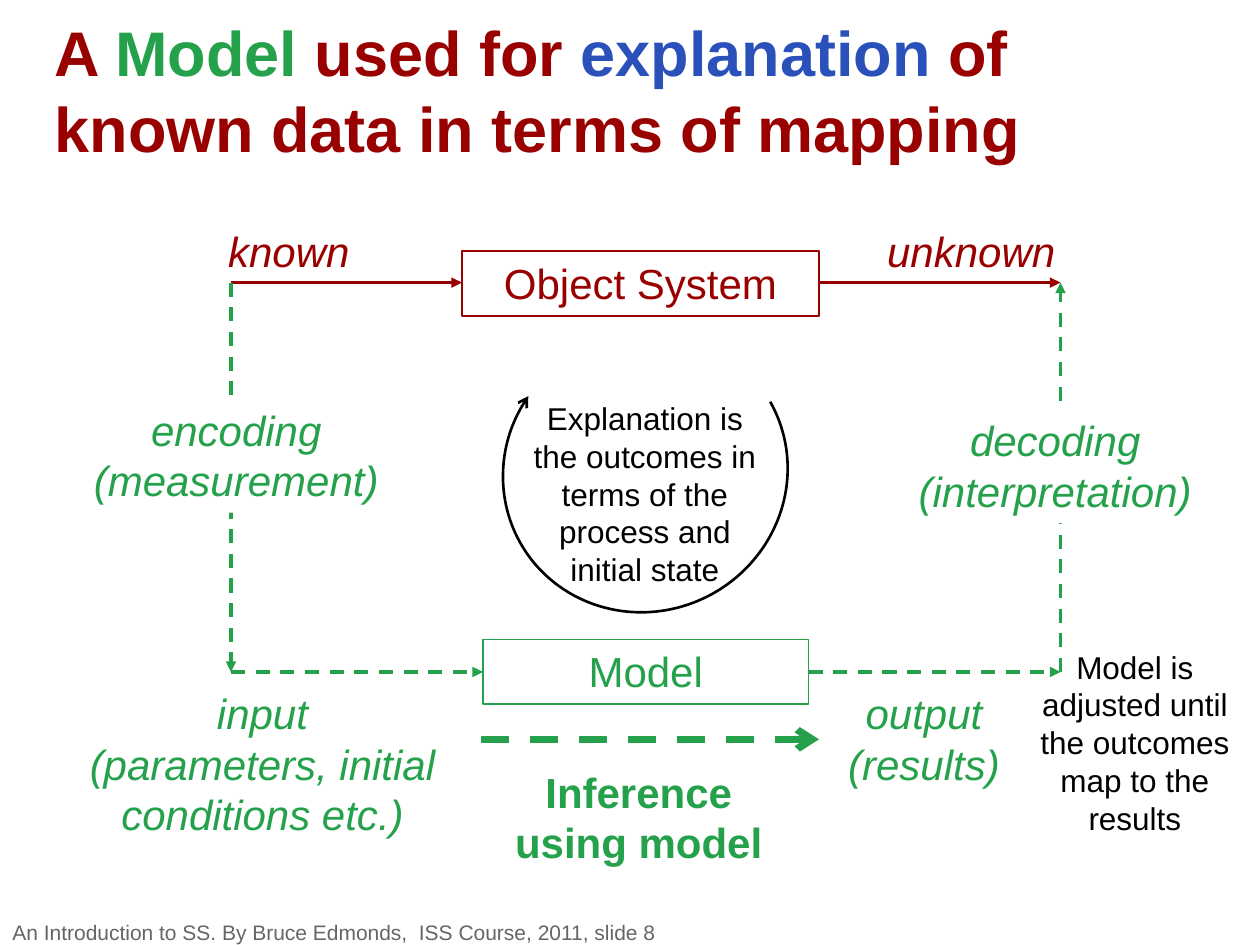
from typing import NamedTuple

from lxml import etree
from pptx import Presentation
from pptx import util as u
from pptx.dml.color import RGBColor
from pptx.enum import dml, shapes, text
from pptx.oxml import ns

Pt = u.Pt
RED = RGBColor(0x99, 0x00, 0x00)
GREEN = RGBColor(0x25, 0xA1, 0x4B)
BLUE = RGBColor(0x2A, 0x50, 0xBA)
GREY = RGBColor(0x65, 0x65, 0x65)
BLACK = RGBColor(0, 0, 0)
WHITE = RGBColor(0xFF, 0xFF, 0xFF)
FONT = "Arial"

# Corners of the mapping loop
LEFT, RIGHT, TOP, BOTTOM = 132, 606, 161.5, 384


class Label(NamedTuple):
    words: str
    left: float
    top: float
    width: float
    height: float
    color: RGBColor = GREEN
    size: float = 24
    bold: bool = False
    italic: bool = False
    outline: bool = False
    backed: bool = False


class Arrow(NamedTuple):
    start: tuple[float, float]
    end: tuple[float, float]
    color: RGBColor = GREEN
    width: float = 2
    dashed: bool = True
    head: str = "triangle"


ARROWS = [
    Arrow((LEFT, TOP), (264, TOP), RED, dashed=False),
    Arrow((468, TOP), (RIGHT, TOP), RED, dashed=False),
    Arrow((LEFT, BOTTOM), (276, BOTTOM)),
    Arrow((462, BOTTOM), (RIGHT, BOTTOM)),
    Arrow((LEFT, TOP), (LEFT, BOTTOM)),
    Arrow((RIGHT, BOTTOM), (RIGHT, TOP)),
    Arrow((275, 422.5), (468, 422.5), width=4, head="arrow"),
]

LABELS = [
    Label("Object System", 264, 143.5, 204, 37, RED, outline=True),
    Label("known", 96, 125.5, 138, 36, RED, italic=True),
    Label("unknown", 486, 125.5, 138, 36, RED, italic=True),
    Label("Model", 276, 365.5, 186, 37, outline=True),
    Label("input\n(parameters, initial conditions etc.)", 36, 389.5, 228, 94.5, italic=True),
    Label("output\n(results)", 414, 389.5, 228, 65.5, italic=True),
    Label("encoding\n(measurement)", 42, 227.5, 186, 65.5, italic=True, backed=True),
    Label("decoding\n(interpretation)", 510, 233.5, 186, 65.5, italic=True, backed=True),
    Label("Inference using model", 272, 434.5, 186, 65.5, bold=True, backed=True),
    Label("Explanation is the outcomes in terms of the process and initial state",
          297.5, 224.5, 142, 116.5, BLACK, 18),
    Label("Model is adjusted until the outcomes map to the results",
          577.5, 366.5, 142, 116.5, BLACK, 18),
]


def add_words(para, words: str, *, color: RGBColor, size: float,
              bold: bool = False, italic: bool = False) -> None:
    """Append formatted text, turning newlines into line breaks."""
    for index, line in enumerate(words.split("\n")):
        if index:
            para.add_line_break()
        span = para.add_run()
        span.text = line
        span.font.name, span.font.size = FONT, Pt(size)
        span.font.bold, span.font.italic = bold, italic
        span.font.color.rgb = color


def add_arrowhead(line, kind: str) -> None:
    tail = etree.SubElement(line._get_or_add_ln(), ns.qn("a:tailEnd"))
    tail.set("type", kind)


def draw_arrow(page, arrow: Arrow) -> None:
    line = page.shapes.add_connector(
        shapes.MSO_CONNECTOR.STRAIGHT, *map(Pt, arrow.start + arrow.end))
    line.line.color.rgb = arrow.color
    line.line.width = Pt(arrow.width)
    if arrow.dashed:
        line.line.dash_style = dml.MSO_LINE.DASH
    add_arrowhead(line.line, arrow.head)
    etree.SubElement(line._element.spPr, ns.qn("a:effectLst"))


def draw_label(page, label: Label) -> None:
    place = [Pt(n) for n in (label.left, label.top, label.width, label.height)]
    if label.outline or label.backed:
        box = page.shapes.add_shape(shapes.MSO_SHAPE.RECTANGLE, *place)
        box.shadow.inherit = False
        if label.backed:
            box.fill.solid()
            box.fill.fore_color.rgb = WHITE
            box.line.fill.background()
        else:
            box.fill.background()
            box.line.color.rgb = label.color
            box.line.width = Pt(1)
    else:
        box = page.shapes.add_textbox(*place)
    frame = box.text_frame
    frame.word_wrap = True
    frame.vertical_anchor = text.MSO_ANCHOR.TOP
    para = frame.paragraphs[0]
    para.alignment = text.PP_ALIGN.CENTER
    add_words(para, label.words, color=label.color, size=label.size,
              bold=label.bold, italic=label.italic)


def draw_title(page) -> None:
    title = page.shapes.title
    title.left, title.top, title.width, title.height = map(Pt, (24, 18, 606, 66))
    frame = title.text_frame
    frame.word_wrap = True
    frame.auto_size = text.MSO_AUTO_SIZE.NONE
    frame.vertical_anchor = text.MSO_ANCHOR.MIDDLE
    para = frame.paragraphs[0]
    para.alignment = text.PP_ALIGN.LEFT
    for words, color in [("A ", RED), ("Model", GREEN), (" used for ", RED),
                         ("explanation ", BLUE),
                         ("of known data in terms of mapping", RED)]:
        add_words(para, words, color=color, size=36, bold=True)


def draw_cycle(page) -> None:
    """Draw the open circular arrow round the explanation."""
    arc = page.shapes.add_shape(
        shapes.MSO_SHAPE.ARC, Pt(289.5), Pt(188), Pt(158.5), Pt(164))
    arc.adjustments[0], arc.adjustments[1] = 162, 91.57
    arc.rotation = 60.5
    arc.shadow.inherit = False
    arc.fill.background()
    arc.line.color.rgb = BLACK
    arc.line.width = Pt(1.5)
    add_arrowhead(arc.line, "arrow")


def draw_footer(page) -> None:
    box = page.shapes.add_textbox(Pt(0), Pt(525), Pt(720), Pt(15))
    frame = box.text_frame
    frame.word_wrap = True
    frame.vertical_anchor = text.MSO_ANCHOR.MIDDLE
    add_words(frame.paragraphs[0],
              "An Introduction to SS. By Bruce Edmonds,  ISS Course, 2011, slide 8",
              color=GREY, size=12)


def main() -> None:
    deck = Presentation()
    deck.slide_width, deck.slide_height = Pt(720), Pt(540)
    page = deck.slides.add_slide(deck.slide_layouts[5])
    draw_title(page)
    for arrow in ARROWS:
        draw_arrow(page, arrow)
    draw_cycle(page)
    for label in LABELS:
        draw_label(page, label)
    draw_footer(page)
    deck.save("out.pptx")


if __name__ == "__main__":
    main()
